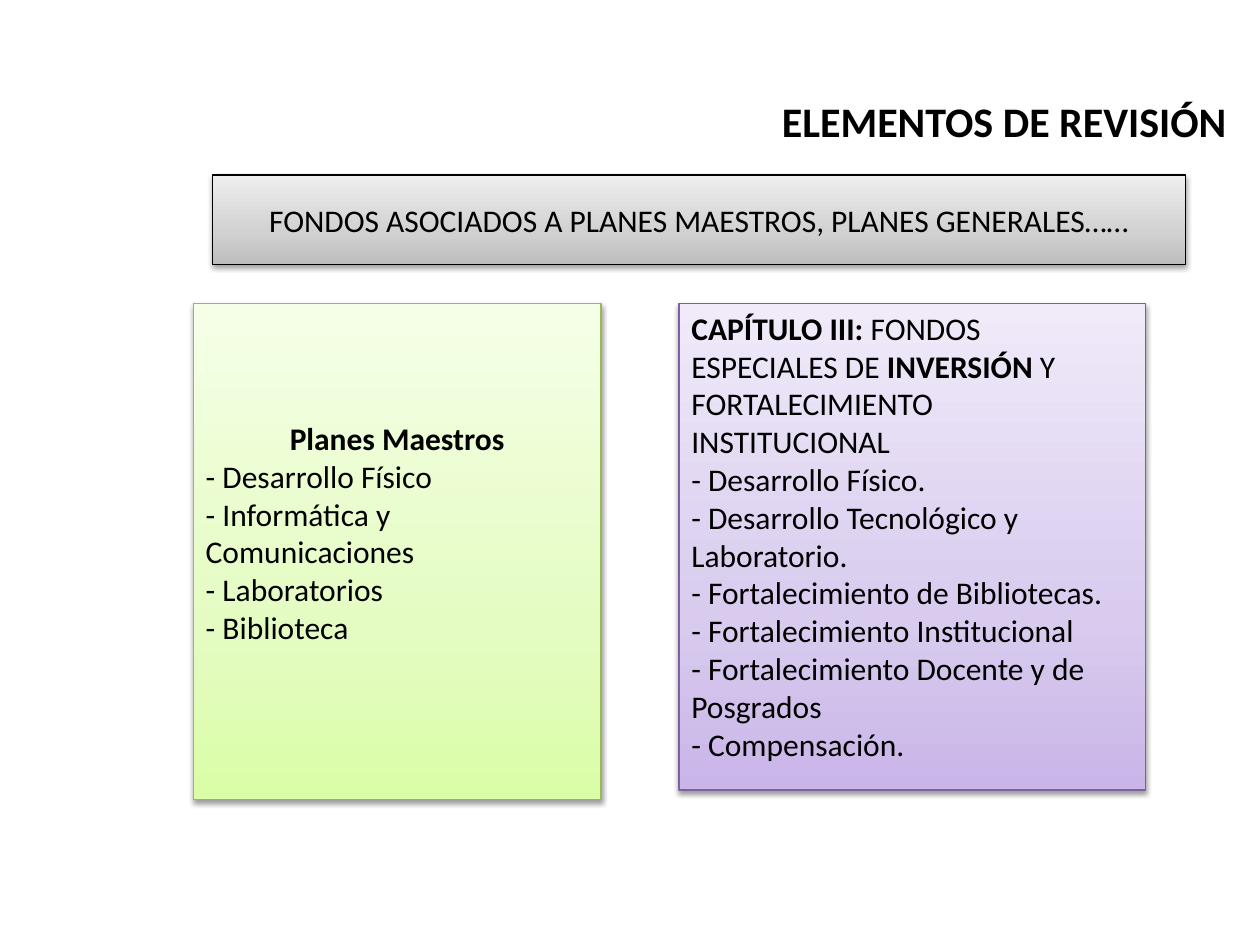
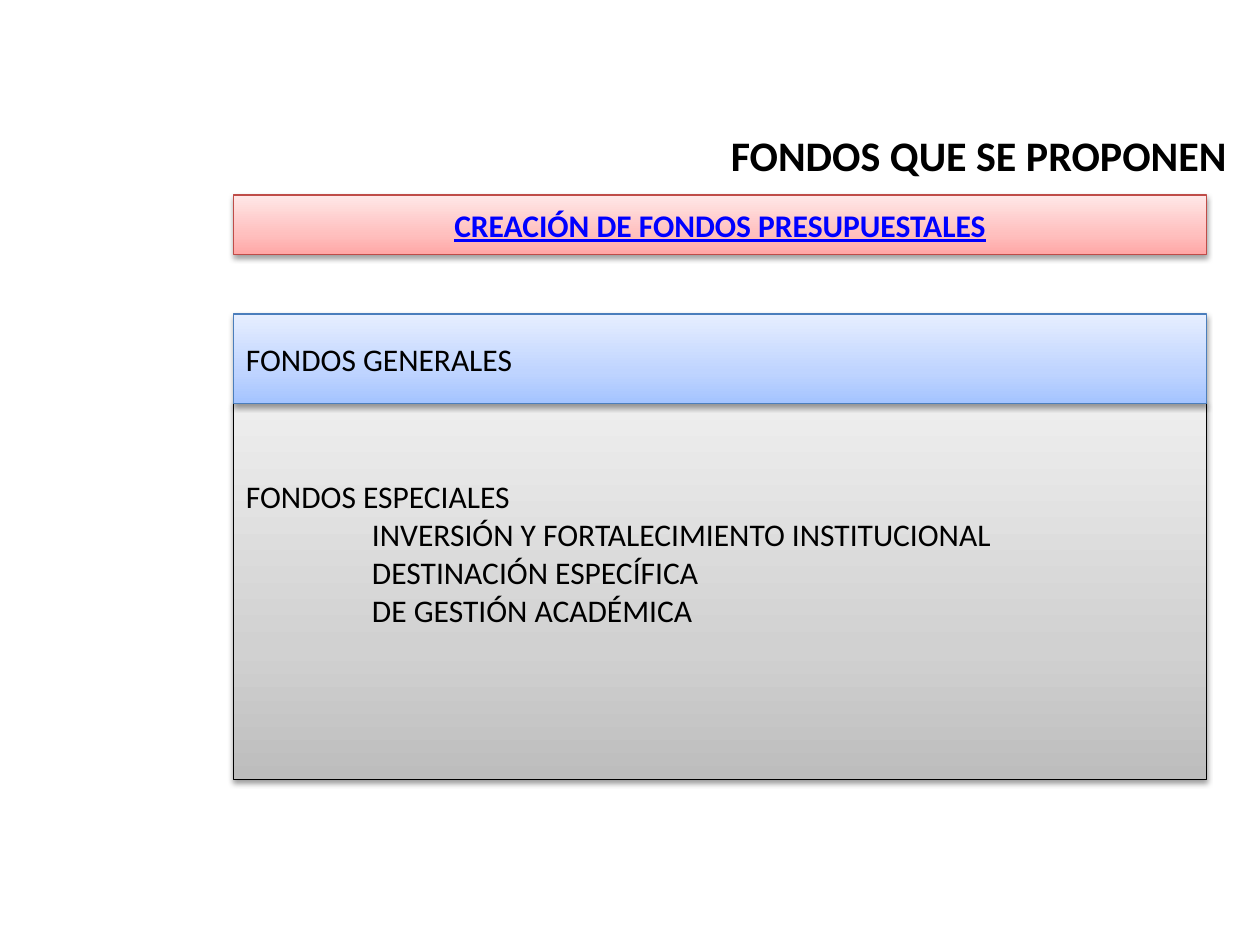
import pptx
import pptx.dml.color
import pptx.enum.shapes
import pptx.enum.text
import pptx.oxml
import pptx.oxml.ns
import pptx.util

Pt = pptx.util.Pt
ALIGN = pptx.enum.text.PP_ALIGN
FONT = "Calibri"
COLORS = {"text": "000000", "link": "0000FF"}
# Bottom, lower-middle and top of the gradient, then the outline
THEMES = {
    "gray": ("BDBDBD", "D1D1D1", "EEEEEE", "000000"),
    "green": ("DAFDA7", "E4FCC2", "F5FFE7", "98B955"),
    "purple": ("C9B5E8", "D8CBEE", "F0EAF9", "7D60A0"),
    "red": ("FFA6A5", "FFC0BF", "FFE7E7", "BF4C48"),
    "blue": ("A4C4FF", "BFD4FF", "E6EEFF", "4B7EBC"),
}
GRADIENT_STOPS = (0, 35, 100)
INSET = 3.6
LINE = 22
BAND_WIDTH = 556

# A paragraph is a list of (text, bold) runs
SLIDES = [
    {
        "title": ("ELEMENTOS DE REVISIÓN", (218, 43.5, 490, 51)),
        "panels": [
            {"theme": "gray", "at": (121.5, 100, BAND_WIDTH, 51), "first": ALIGN.CENTER,
             "lines": [[("FONDOS ASOCIADOS A PLANES MAESTROS, PLANES GENERALES……", False)]]},
            {"theme": "green", "at": (110.5, 173.5, 233, 283.5), "first": ALIGN.CENTER,
             "insets": (INSET, INSET + LINE),
             "lines": [[("Planes Maestros", True)],
                       [("- Desarrollo Físico", False)],
                       [("- Informática y Comunicaciones", False)],
                       [("- Laboratorios", False)],
                       [("- Biblioteca", False)]]},
            {"theme": "purple", "at": (388, 173.5, 266.5, 278), "insets": (0, 13),
             "lines": [[("CAPÍTULO III: ", True), ("FONDOS ESPECIALES DE ", False),
                        ("INVERSIÓN", True),
                        (" Y FORTALECIMIENTO INSTITUCIONAL", False)],
                       [("- Desarrollo Físico.", False)],
                       [("- Desarrollo Tecnológico y Laboratorio.", False)],
                       [("- Fortalecimiento de Bibliotecas.", False)],
                       [("- Fortalecimiento Institucional", False)],
                       [("- Fortalecimiento Docente y de Posgrados", False)],
                       [("- Compensación.", False)]]},
        ],
    },
    {
        "title": ("FONDOS QUE SE PROPONEN", (60, 49, 648, 79)),
        "panels": [
            {"theme": "red", "at": (133.5, 111.5, BAND_WIDTH, 34), "first": ALIGN.CENTER,
             "color": "link", "underline": True,
             "lines": [[("CREACIÓN DE FONDOS PRESUPUESTALES", True)]]},
            {"theme": "gray", "at": (133.5, 230.5, BAND_WIDTH, 215), "indent": 72,
             "insets": (INSET, INSET + 2 * LINE),
             "lines": [[("FONDOS ESPECIALES", False)],
                       [("INVERSIÓN Y FORTALECIMIENTO INSTITUCIONAL", False)],
                       [("DESTINACIÓN ESPECÍFICA", False)],
                       [("DE GESTIÓN ACADÉMICA", False)]]},
            {"theme": "blue", "at": (133.5, 179.5, BAND_WIDTH, 51), "first": ALIGN.JUSTIFY,
             "lines": [[("FONDOS GENERALES", False)]]},
        ],
    },
]


def rgb(value):
    return pptx.dml.color.RGBColor.from_string(value)


def style_font(paragraph, size, color="text"):
    paragraph.font.name = FONT
    paragraph.font.size = Pt(size)
    paragraph.font.color.rgb = rgb(COLORS[color])


def add_xml(parent, markup):
    namespace = pptx.oxml.ns.nsdecls("a")
    parent.append(pptx.oxml.parse_xml(markup.replace(" ", f" {namespace} ", 1)))


def paint(panel, theme):
    """Give a panel its three-stop gradient, outline and soft shadow."""
    *shades, outline = THEMES[theme]
    panel.fill.gradient()
    panel.fill.gradient_angle = 90
    properties = panel.element.spPr
    stops = properties.find(".//" + pptx.oxml.ns.qn("a:gsLst"))
    for stop in list(stops):
        stops.remove(stop)
    for position, shade in zip(GRADIENT_STOPS, shades):
        add_xml(stops, f'<a:gs pos="{position * 1000}"><a:srgbClr val="{shade}"/></a:gs>')
    panel.line.color.rgb = rgb(outline)
    panel.line.width = Pt(0.75)
    panel.shadow.inherit = False
    add_xml(properties.find(pptx.oxml.ns.qn("a:effectLst")),
            f'<a:outerShdw blurRad="{Pt(3.1)}" dist="{Pt(1.6)}" dir="5400000" rotWithShape="0">'
            '<a:srgbClr val="000000"><a:alpha val="38000"/></a:srgbClr></a:outerShdw>')


def add_title(slide, text, at):
    frame = slide.shapes.add_textbox(*map(Pt, at)).text_frame
    frame.word_wrap = True
    frame.vertical_anchor = pptx.enum.text.MSO_ANCHOR.MIDDLE
    paragraph = frame.paragraphs[0]
    paragraph.text = text
    paragraph.alignment = ALIGN.RIGHT
    style_font(paragraph, 24)
    paragraph.font.bold = True


def add_panel(slide, content):
    panel = slide.shapes.add_shape(
        pptx.enum.shapes.MSO_SHAPE.RECTANGLE, *map(Pt, content["at"]))
    paint(panel, content["theme"])
    frame = panel.text_frame
    frame.word_wrap = True
    frame.vertical_anchor = pptx.enum.text.MSO_ANCHOR.MIDDLE
    frame.margin_top, frame.margin_bottom = map(Pt, content.get("insets", (INSET, INSET)))
    for index, runs in enumerate(content["lines"]):
        paragraph = frame.add_paragraph() if index else frame.paragraphs[0]
        paragraph.alignment = ALIGN.LEFT if index else content.get("first", ALIGN.LEFT)
        if index and "indent" in content:
            paragraph._p.get_or_add_pPr().set("marL", str(Pt(content["indent"])))
        style_font(paragraph, 18, content.get("color", "text"))
        paragraph.font.underline = content.get("underline")
        for text, bold in runs:
            run = paragraph.add_run()
            run.text = text
            run.font.bold = bold


def main():
    deck = pptx.Presentation()
    deck.slide_width, deck.slide_height = Pt(720), Pt(540)
    for content in SLIDES:
        slide = deck.slides.add_slide(deck.slide_layouts[6])
        add_title(slide, *content["title"])
        for panel in content["panels"]:
            add_panel(slide, panel)
    deck.save("out.pptx")


if __name__ == "__main__":
    main()
